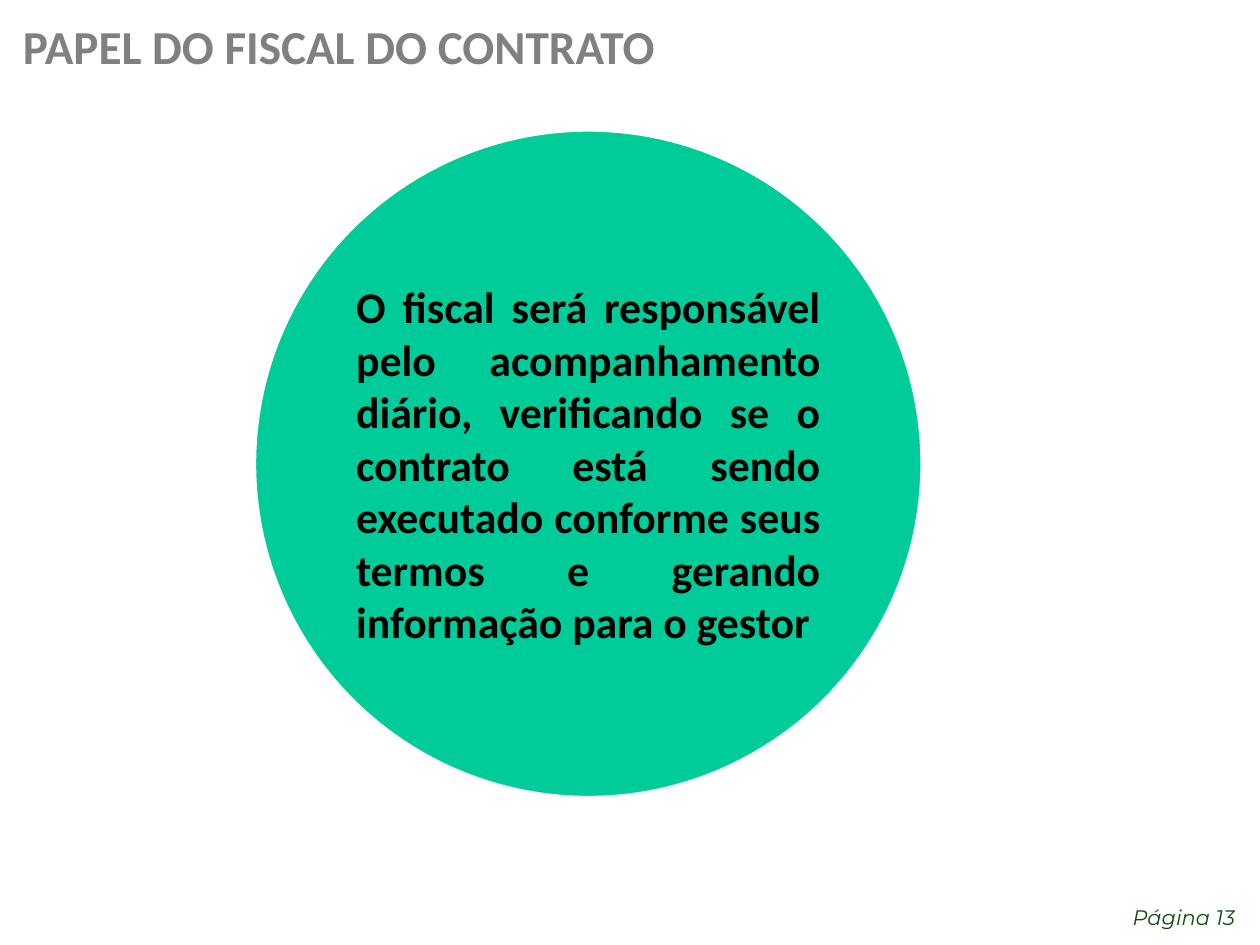
"""Builds the slide on the role of the contract inspector."""
from pptx import Presentation
from pptx.dml.color import RGBColor
from pptx.enum.shapes import MSO_SHAPE as SHAPE
from pptx.enum.text import MSO_ANCHOR as ANCHOR, MSO_AUTO_SIZE as AUTO, PP_ALIGN as ALIGN
from pptx.util import Cm, Pt


def rgb(value):
    return RGBColor.from_string(value)


class Deck:
    font = "Calibri"
    page_font = "Montserrat"
    title_color = "808080"
    text_color = "000000"
    page_color = "0F4C0E"
    circle_color = "00CC99"
    line_color = "FFFFFF"

    def __init__(self):
        self.prs = Presentation()
        self.prs.slide_width, self.prs.slide_height = Cm(25.4), Cm(19.05)
        self.s = self.prs.slides.add_slide(self.prs.slide_layouts[5])

    def set_text(self, sp, text, size, color, align, anchor, font=None, bold=False, italic=False):
        tf = sp.text_frame
        tf.word_wrap = True
        tf.auto_size = AUTO.NONE
        tf.vertical_anchor = anchor
        p = tf.paragraphs[0]
        p.text = text
        p.alignment = align
        f = p.font
        f.name, f.size, f.bold, f.italic = font or self.font, Pt(size), bold, italic
        f.color.rgb = rgb(color)
        return tf

    def title(self, text, x, y, w, h):
        sp = self.s.shapes.title
        sp.left, sp.top, sp.width, sp.height = Cm(x), Cm(y), Cm(w), Cm(h)
        tf = self.set_text(sp, text, 27, self.title_color, ALIGN.LEFT, ANCHOR.TOP, bold=True)
        tf.margin_left = Cm(0.46)

    def circle(self, text, x, y, d):
        sp = self.s.shapes.add_shape(SHAPE.OVAL, Cm(x), Cm(y), Cm(d), Cm(d))
        sp.shadow.inherit = False
        sp.fill.solid()
        sp.fill.fore_color.rgb = rgb(self.circle_color)
        sp.line.color.rgb = rgb(self.line_color)
        sp.line.width = Pt(2)
        tf = self.set_text(sp, text, 25, self.text_color, ALIGN.JUSTIFY, ANCHOR.MIDDLE, bold=True)
        tf.margin_left = tf.margin_right = tf.margin_top = tf.margin_bottom = Cm(0.08)

    def page(self, text, x, y, w, h):
        sp = self.s.shapes.add_textbox(Cm(x), Cm(y), Cm(w), Cm(h))
        tf = self.set_text(sp, text, 12, self.page_color, ALIGN.RIGHT, ANCHOR.TOP,
                           font=self.page_font, italic=True)
        tf.paragraphs[0].line_spacing = 1.2


def main():
    deck = Deck()
    deck.circle("O fiscal será responsável pelo acompanhamento diário, verificando se o "
                "contrato está sendo executado conforme seus termos e gerando informação "
                "para o gestor", 5.13, 2.62, 13.46)
    deck.page("Página 13", 21.16, 18, 3.99, 0.81)
    deck.title("PAPEL DO FISCAL DO CONTRATO", 0, 0.23, 15.24, 1.57)
    deck.prs.save("out.pptx")


if __name__ == "__main__":
    main()
